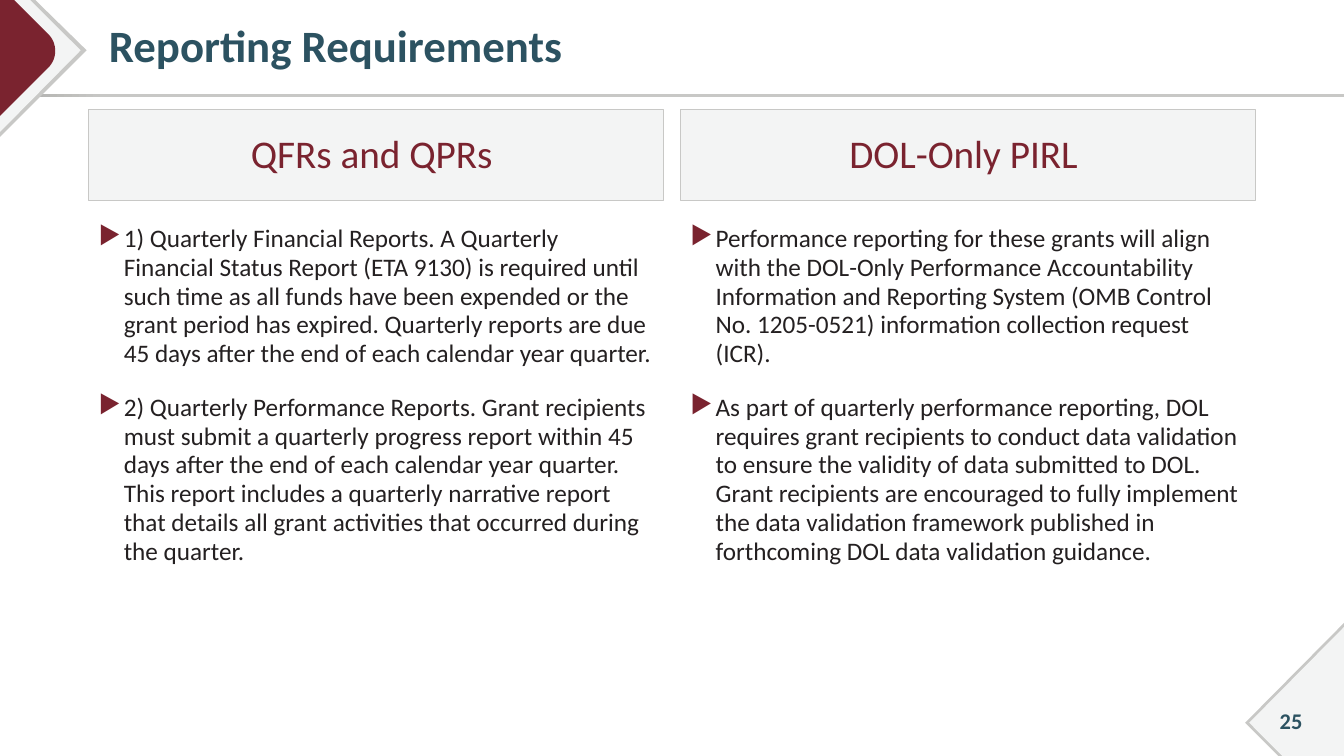
from lxml import etree
from pptx import Presentation
from pptx.dml.color import RGBColor as RGB
from pptx.enum.shapes import MSO_SHAPE as Preset
from pptx.enum.text import MSO_ANCHOR as Anchor, PP_ALIGN as Align
from pptx.oxml.ns import qn
from pptx.util import Inches, Pt

COLORS = {
    "band": "F3F4F4", "edge": "C8C8C6", "edge_dark": "ABABA8",
    "maroon": "7A232F", "teal": "2C5261", "ink": "242021",
}
FONT = "Calibri"
WIDTH, HEIGHT = 13.33, 7.5

COLUMNS = [
    ("QFRs and QPRs ", [
        "1) Quarterly Financial Reports. A Quarterly Financial Status Report (ETA 9130) "
        "is required until such time as all funds have been expended or the grant period "
        "has expired. Quarterly reports are due 45 days after the end of each calendar "
        "year quarter.",
        "2) Quarterly Performance Reports. Grant recipients must submit a quarterly "
        "progress report within 45 days after the end of each calendar year quarter. "
        "This report includes a quarterly narrative report that details all grant "
        "activities that occurred during the quarter.",
    ]),
    ("DOL-Only PIRL ", [
        "Performance reporting for these grants will align with the DOL-Only Performance "
        "Accountability Information and Reporting System (OMB Control No. 1205-0521) "
        "information collection request (ICR).",
        "As part of quarterly performance reporting, DOL requires grant recipients to "
        "conduct data validation to ensure the validity of data submitted to DOL. Grant "
        "recipients are encouraged to fully implement the data validation framework "
        "published in forthcoming DOL data validation guidance.",
    ]),
]


def color(name):
    """Return the named colour."""
    return RGB.from_string(COLORS[name])


def bezier(start, pull_a, pull_b, end, steps=16):
    """Return points along a cubic curve."""
    fractions = [i / steps for i in range(steps + 1)]
    return [
        tuple((1 - t) ** 3 * a + 3 * t * (1 - t) ** 2 * b + 3 * t * t * (1 - t) * c + t ** 3 * d
              for a, b, c, d in zip(start, pull_a, pull_b, end))
        for t in fractions
    ]


def add_outline(slide, left, top, points, fill):
    """Draw a closed, filled outline whose points are offsets from left, top."""
    corners = [(Inches(left + x), Inches(top + y)) for x, y in points]
    builder = slide.shapes.build_freeform(*corners[0])
    builder.add_line_segments(corners[1:], close=True)
    outline = builder.convert_to_shape()
    outline.shadow.inherit = False
    outline.fill.solid()
    outline.fill.fore_color.rgb = color(fill)
    outline.line.fill.background()


def add_panel(slide, left, top, width, height):
    """Add a plain rectangle without shadow."""
    panel = slide.shapes.add_shape(
        Preset.RECTANGLE, Inches(left), Inches(top), Inches(width), Inches(height))
    panel.shadow.inherit = False
    return panel


def add_text_area(slide, left, top, width, height):
    """Add a wrapping text box and return its frame."""
    frame = slide.shapes.add_textbox(
        Inches(left), Inches(top), Inches(width), Inches(height)).text_frame
    frame.word_wrap = True
    return frame


def add_words(paragraph, words, size, tint, bold=False):
    """Add one formatted run."""
    run = paragraph.add_run()
    run.text = words
    run.font.name, run.font.size, run.font.bold = FONT, Pt(size), bold
    run.font.color.rgb = color(tint)


def add_bullet(paragraph):
    """Give the paragraph a hanging maroon triangle."""
    properties = paragraph._p.get_or_add_pPr()
    properties.set("marL", str(Inches(0.25)))
    properties.set("indent", str(-Inches(0.25)))
    tint = etree.SubElement(properties, qn("a:buClr"))
    etree.SubElement(tint, qn("a:srgbClr")).set("val", COLORS["maroon"])
    etree.SubElement(properties, qn("a:buChar")).set("char", "▶")


def add_rule(slide, left, top, width, height):
    """Draw the shaded rule under the title."""
    rule = add_panel(slide, left, top, width, height)
    rule.line.fill.background()
    rule.fill.gradient()
    rule.fill.gradient_angle = 0
    for stop, place, tint in zip(rule.fill.gradient_stops, (0, 0.08), ("edge_dark", "edge")):
        stop.position = place
        stop.color.rgb = color(tint)


def add_top_corner(slide, left, top):
    """Draw the layered diamond in the top left corner."""
    for shoulder, tip, foot, fill in [(0.35, 0.86, 1.36, "edge"), (0.3, 0.8, 1.31, "band")]:
        add_outline(slide, left, top, [(0, 0), (shoulder, 0), (tip, 0.5), (0, foot)], fill)
    nose = bezier((0.48, 0.34), (0.57, 0.43), (0.57, 0.58), (0.48, 0.67))
    add_outline(slide, left, top, [(0, 0), (0.14, 0), *nose, (0, 1.15)], "maroon")


def add_page_corner(slide, right, bottom, number):
    """Draw the bottom right corner with the page number."""
    for rise, foot, tip, fill in [(1.32, 0.65, 0.98, "edge"), (1.28, 0.61, 0.94, "band")]:
        add_outline(slide, right, bottom, [(0, -rise), (0, 0), (-foot, 0), (-tip, -0.33)], fill)
    frame = add_text_area(slide, right - 0.88, bottom - 0.55, 0.71, 0.4)
    frame.vertical_anchor = Anchor.MIDDLE
    frame.paragraphs[0].alignment = Align.CENTER
    add_words(frame.paragraphs[0], number, 16, "teal", True)


def add_title(slide, left, top, width, height, words):
    """Write the slide title."""
    frame = add_text_area(slide, left, top, width, height)
    frame.margin_left = Inches(0.2)
    frame.vertical_anchor = Anchor.MIDDLE
    frame.paragraphs[0].line_spacing = 0.9
    add_words(frame.paragraphs[0], words, 32, "teal", True)


def add_column(slide, left, top, width, height, heading, points):
    """Place a heading panel above its bulleted points."""
    panel = add_panel(slide, left, top, width, 0.9)
    panel.fill.solid()
    panel.fill.fore_color.rgb = color("band")
    panel.line.color.rgb = color("edge")
    panel.line.width = Pt(0.75)
    panel.text_frame.word_wrap = True
    panel.text_frame.vertical_anchor = Anchor.MIDDLE
    label = panel.text_frame.paragraphs[0]
    label.alignment, label.line_spacing = Align.CENTER, 0.95
    add_words(label, heading, 28, "maroon")

    frame = add_text_area(slide, left, top + 1.09, width, height - 1.09)
    for i, point in enumerate(points):
        paragraph = frame.add_paragraph() if i else frame.paragraphs[0]
        add_bullet(paragraph)
        paragraph.line_spacing = 0.95
        if i:
            paragraph.space_before = Pt(18)
        add_words(paragraph, point, 18, "ink")


def main():
    """Build and save the slide."""
    deck = Presentation()
    deck.slide_width, deck.slide_height = Inches(WIDTH), Inches(HEIGHT)
    slide = deck.slides.add_slide(deck.slide_layouts[6])
    add_rule(slide, 0, 0.93, WIDTH, 0.03)
    add_top_corner(slide, 0, 0)
    add_page_corner(slide, WIDTH, HEIGHT, "25")
    add_title(slide, 0.88, 0.05, 12.12, 0.86, "Reporting Requirements")
    for i, (heading, points) in enumerate(COLUMNS):
        add_column(slide, 0.88 + i * 5.87, 1.09, 5.7, 5.68, heading, points)
    deck.save("out.pptx")


if __name__ == "__main__":
    main()
